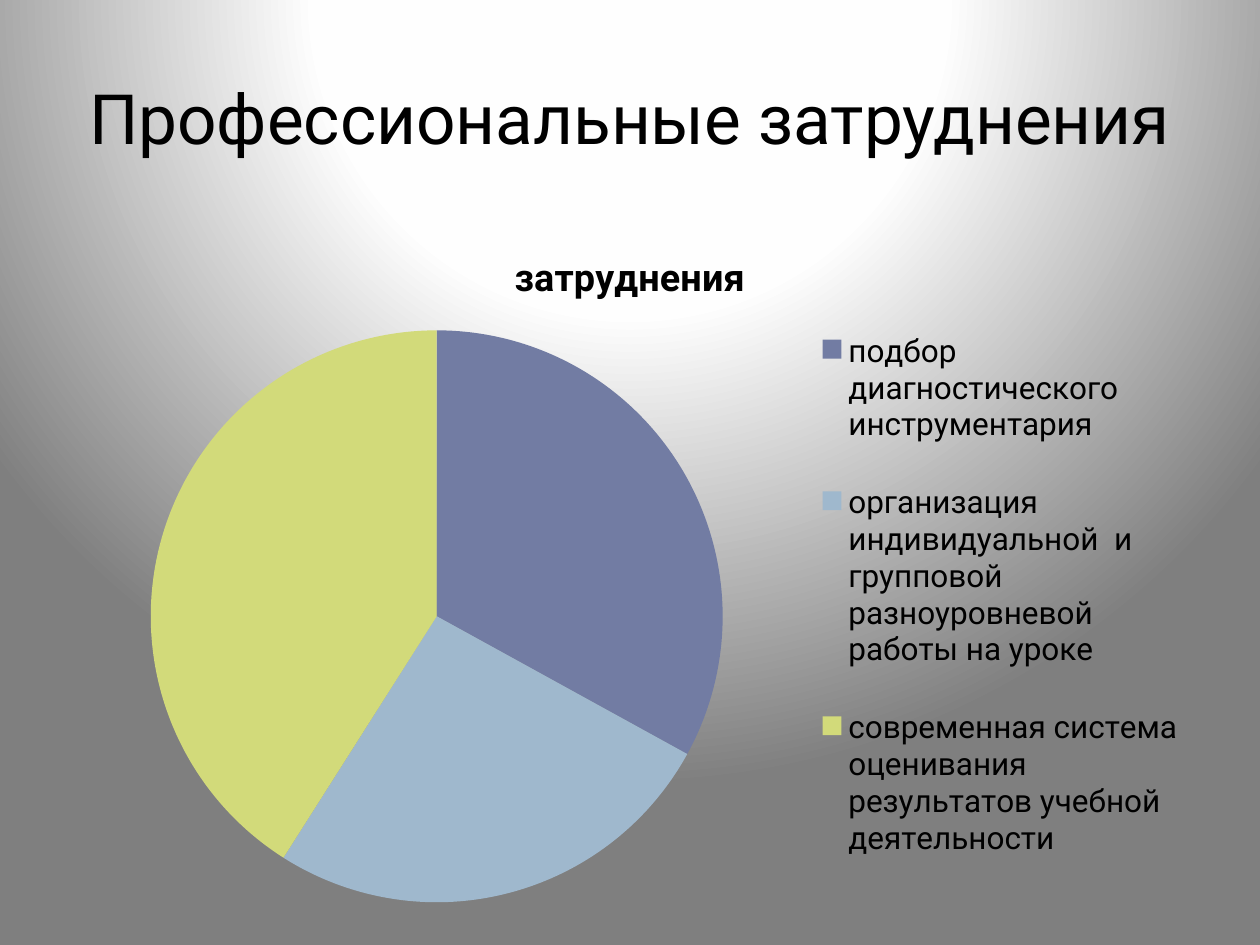
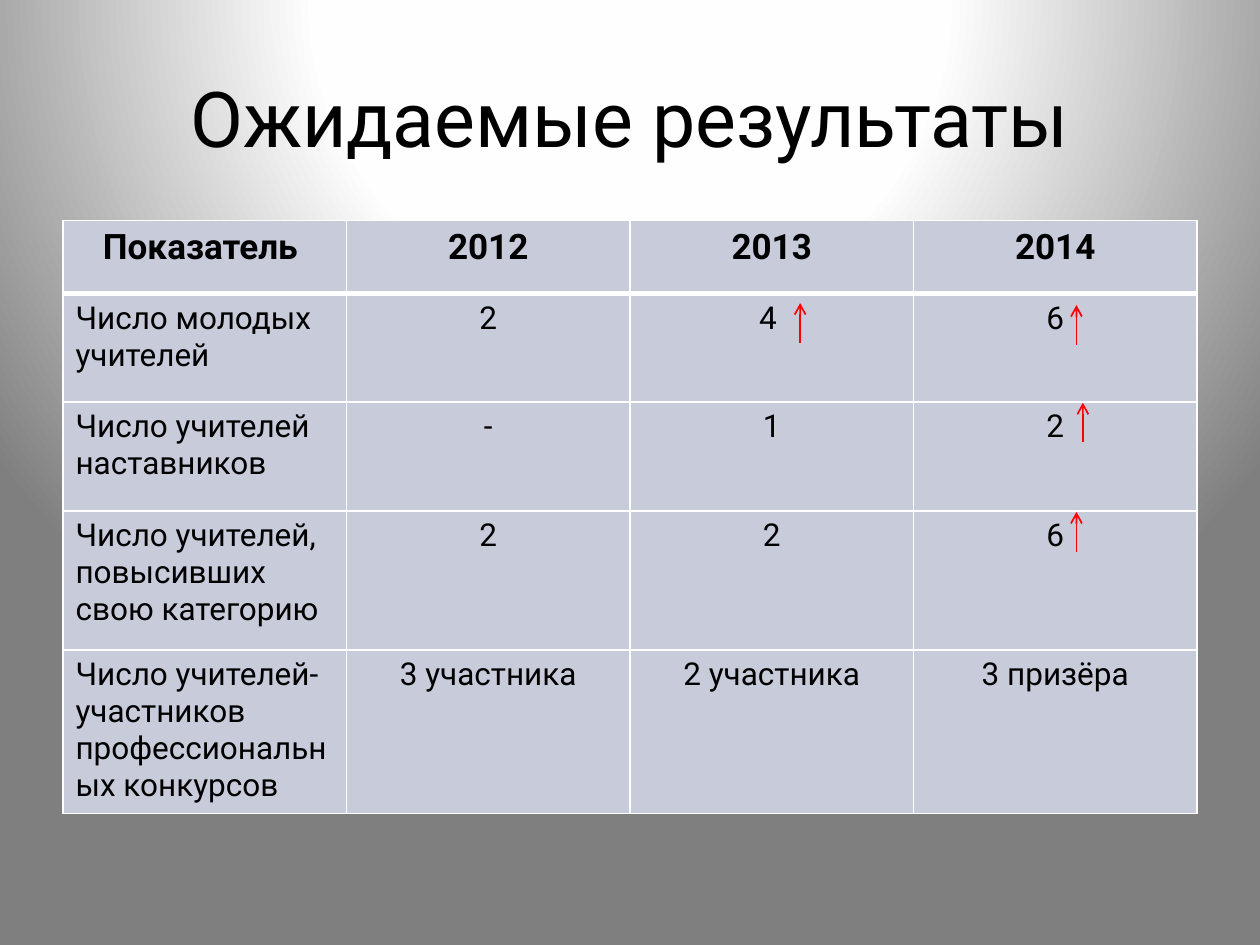
import pptx
import pptx.chart.data
import pptx.dml.color
import pptx.enum.chart
import pptx.enum.shapes
import pptx.enum.text
import pptx.oxml
import pptx.oxml.ns
import pptx.util
from lxml import etree

Cm = pptx.util.Cm
Pt = pptx.util.Pt
qn = pptx.oxml.ns.qn
CENTER = pptx.enum.text.PP_ALIGN.CENTER
LEFT = pptx.enum.text.PP_ALIGN.LEFT


def rgb(value):
    return pptx.dml.color.RGBColor.from_string(value)


def parse_a(xml):
    ns = pptx.oxml.ns.nsdecls("a")
    return pptx.oxml.parse_xml(xml.replace(">", f" {ns}>", 1))


class Deck:
    FONT = "Roboto"
    INK = "000000"
    WHITE = "FFFFFF"
    CELL = "C7CBDA"
    ARROW = "FF0000"
    SLICES = ("727CA3", "9FB8CD", "D2DA7A")
    STOPS = ((0, "FFFFFF"), (40, "FEFEFE"), (100, "7F7F7F"))
    LEFT_EDGE = 1.27
    WIDTH = 22.86

    def __init__(self):
        self.prs = pptx.Presentation()
        self.prs.slide_width = Cm(25.4)
        self.prs.slide_height = Cm(19.05)
        self.s = None

    def style(self, font, size, bold=False):
        font.name = self.FONT
        font.size = Pt(size)
        font.bold = bold
        font.color.rgb = rgb(self.INK)

    def slide(self, title, size):
        self.s = self.prs.slides.add_slide(self.prs.slide_layouts[6])
        self.background()
        sp = self.s.shapes.add_textbox(
            Cm(self.LEFT_EDGE), Cm(0.76), Cm(self.WIDTH), Cm(3.18))
        tf = sp.text_frame
        tf.word_wrap = True
        tf.vertical_anchor = pptx.enum.text.MSO_ANCHOR.MIDDLE
        p = tf.paragraphs[0]
        p.text = title
        p.alignment = CENTER
        self.style(p.font, size)

    def background(self):
        self.s.background.fill.gradient()
        grad = self.s.element.find(".//" + qn("a:gradFill"))
        stops = "".join(
            f'<a:gs pos="{pos * 1000}"><a:srgbClr val="{color}"/></a:gs>'
            for pos, color in self.STOPS)
        grad.getparent().replace(grad, parse_a(
            f'<a:gradFill rotWithShape="1"><a:gsLst>{stops}</a:gsLst>'
            '<a:path path="circle"><a:fillToRect l="50000" t="-80000" '
            'r="50000" b="180000"/></a:path></a:gradFill>'))

    def place(self, part, box, size, inner=False):
        layout = part.find(qn("c:layout"))
        if layout is None:
            layout = etree.Element(qn("c:layout"))
            if inner:
                part.insert(0, layout)
            else:
                part.find(qn("c:legendPos")).addnext(layout)
        for child in list(layout):
            layout.remove(child)
        manual = etree.SubElement(layout, qn("c:manualLayout"))
        if inner:
            etree.SubElement(manual, qn("c:layoutTarget"), val="inner")
        for mode in ("xMode", "yMode"):
            etree.SubElement(manual, qn("c:" + mode), val="edge")
        for key, length, whole in zip("xywh", box, size * 2):
            etree.SubElement(manual, qn("c:" + key), val=f"{length / whole:.4f}")

    def pie(self, name, values, top, height, plot_box, legend_box):
        data = pptx.chart.data.CategoryChartData()
        data.categories = list(values)
        data.add_series(name, list(values.values()))
        chart = self.s.shapes.add_chart(
            pptx.enum.chart.XL_CHART_TYPE.PIE, Cm(self.LEFT_EDGE), Cm(top),
            Cm(self.WIDTH), Cm(height), data).chart
        self.style(chart.font, 18)
        chart.has_title = True
        p = chart.chart_title.text_frame.paragraphs[0]
        p.text = name
        self.style(p.font, 21.6, True)
        chart.has_legend = True
        chart.legend.position = pptx.enum.chart.XL_LEGEND_POSITION.RIGHT
        chart.legend.include_in_layout = False
        self.style(chart.legend.font, 18)
        plot = chart.plots[0]
        plot.vary_by_categories = True
        for i, color in enumerate(self.SLICES):
            fill = plot.series[0].points[i].format.fill
            fill.solid()
            fill.fore_color.rgb = rgb(color)
        size = (self.WIDTH, height)
        root = chart.element
        self.place(root.find(".//" + qn("c:plotArea")), plot_box, size, True)
        self.place(root.find(".//" + qn("c:legend")), legend_box, size)

    def borders(self, cell, top, bottom):
        widths = {"lnL": 1, "lnR": 1, "lnT": top, "lnB": bottom}
        tcPr = cell._tc.get_or_add_tcPr()
        for i, (side, width) in enumerate(widths.items()):
            tcPr.insert(i, parse_a(
                f'<a:{side} w="{Pt(width)}"><a:solidFill>'
                f'<a:srgbClr val="{self.WHITE}"/></a:solidFill></a:{side}>'))

    def table(self, rows, heights, top):
        table = self.s.shapes.add_table(
            len(rows), len(rows[0]), Cm(self.LEFT_EDGE), Cm(top),
            Cm(self.WIDTH), Cm(sum(heights))).table
        table.horz_banding = False
        for i, (texts, height) in enumerate(zip(rows, heights)):
            table.rows[i].height = Cm(height)
            for j, text in enumerate(texts):
                cell = table.cell(i, j)
                cell.fill.solid()
                cell.fill.fore_color.rgb = rgb(self.CELL)
                self.borders(cell, 3 if i == 1 else 1, 3 if i == 0 else 1)
                p = cell.text_frame.paragraphs[0]
                p.text = text
                p.alignment = LEFT if i and j == 0 else CENTER
                self.style(p.font, 18 if i else 20, i == 0)

    def up_arrow(self, x, bottom, length=0.8):
        line = self.s.shapes.add_connector(
            pptx.enum.shapes.MSO_CONNECTOR.STRAIGHT,
            Cm(x), Cm(bottom), Cm(x), Cm(bottom - length))
        line.line.color.rgb = rgb(self.ARROW)
        line.line.width = Pt(1)
        etree.SubElement(line.line._get_or_add_ln(), qn("a:tailEnd"), type="arrow")
        etree.SubElement(line._element.spPr, qn("a:effectLst"))


def main():
    deck = Deck()

    deck.slide("Профессиональные затруднения", 39.6)
    deck.pie("затруднения", {
        "подбор диагностического инструментария": 33,
        "организация индивидуальной  и групповой разноуровневой работы на уроке": 26,
        "современная система оценивания результатов учебной деятельности": 41,
    }, top=4.52, height=14, plot_box=(1.77, 2.14, 11.53, 11.53),
        legend_box=(15.06, 1.37, 7.66, 12.22))

    deck.slide("Ожидаемые результаты", 44)
    deck.table([
        ("Показатель ", "2012", "2013", "2014"),
        ("Число молодых учителей", "2", "4 ", "6"),
        ("Число учителей наставников", "-", "1", "2"),
        ("Число учителей, повысивших свою категорию", "2", "2", "6"),
        ("Число учителей- участников профессиональных конкурсов",
         "3 участника", "2 участника", "3 призёра"),
    ], heights=(1.47, 2.18, 2.2, 2.8, 3.1), top=4.45)
    for x, bottom in ((16.13, 6.91), (21.7, 6.95), (21.83, 8.92), (21.7, 11.12)):
        deck.up_arrow(x, bottom)

    deck.prs.save("out.pptx")


if __name__ == "__main__":
    main()
